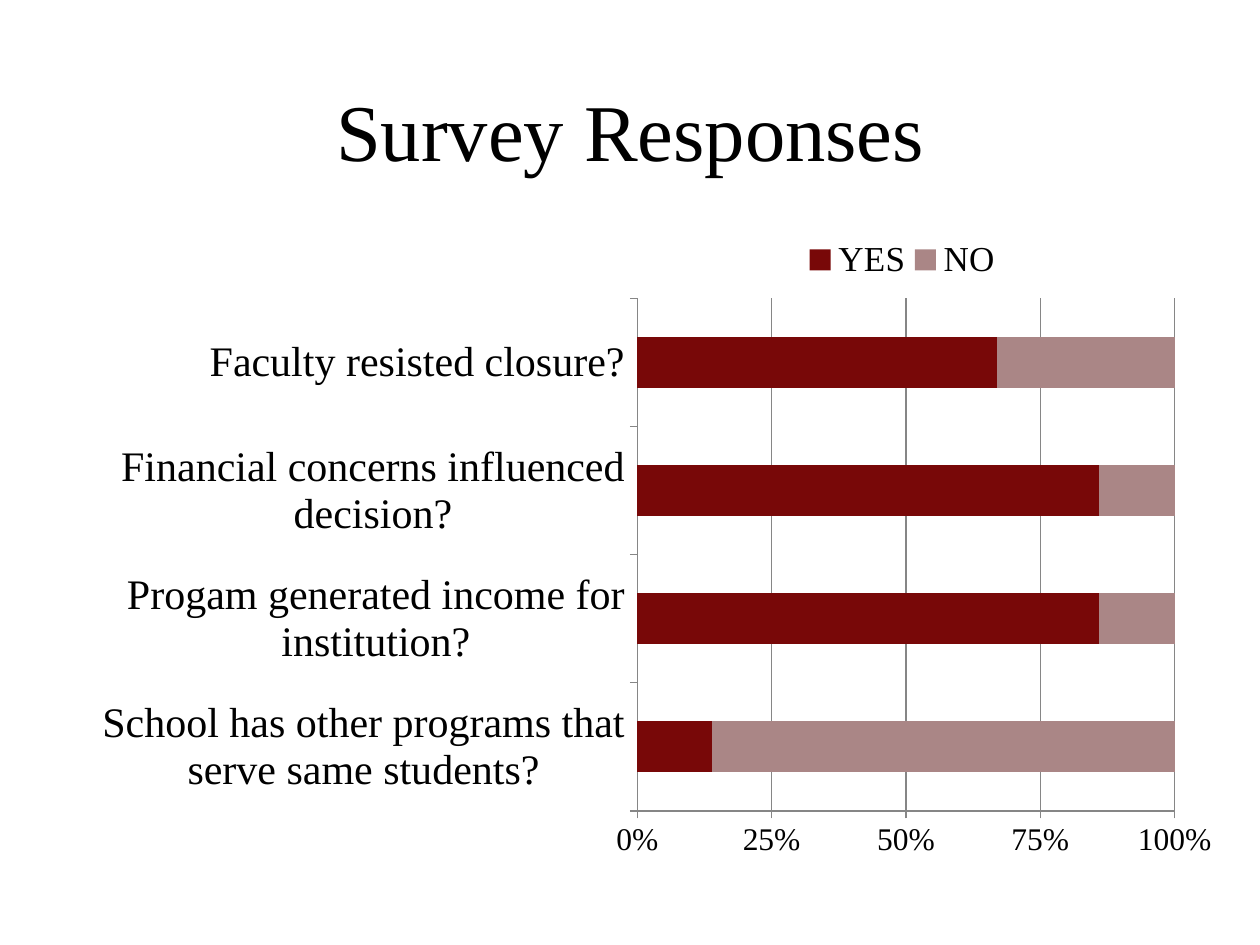
import pptx
import pptx.chart.data
import pptx.dml.color
import pptx.enum.chart
import pptx.enum.text
import pptx.oxml
import pptx.oxml.ns
import pptx.util

Inches = pptx.util.Inches
Pt = pptx.util.Pt
RGBColor = pptx.dml.color.RGBColor

BLACK = RGBColor(0x00, 0x00, 0x00)
GRAY = RGBColor(0x86, 0x86, 0x86)
DARK_RED = RGBColor(0x78, 0x08, 0x08)
DUSTY_ROSE = RGBColor(0xAA, 0x86, 0x86)
FONT_NAME = "Times New Roman"

QUESTIONS = [
    "School has other programs that serve same students?",
    "Progam generated income for institution?",
    "Financial concerns influenced decision?",
    "Faculty resisted closure?",
]
RESPONSES = [
    ("YES", [14, 86, 86, 67], DARK_RED),
    ("NO", [86, 14, 14, 33], DUSTY_ROSE),
]


def format_font(font, size):
    font.name = FONT_NAME
    font.size = Pt(size)
    font.color.rgb = BLACK


def place_title(slide, left, top, width, height):
    title = slide.shapes.title
    title.left, title.top, title.width, title.height = left, top, width, height
    title.text_frame.text = "Survey Responses"
    title.text_frame.vertical_anchor = pptx.enum.text.MSO_ANCHOR.MIDDLE
    paragraph = title.text_frame.paragraphs[0]
    paragraph.alignment = pptx.enum.text.PP_ALIGN.CENTER
    format_font(paragraph.font, 46)


def make_layout(x, y, width, height, inner=False):
    target = '<c:layoutTarget val="inner"/>' if inner else ""
    return pptx.oxml.parse_xml(
        f'<c:layout {pptx.oxml.ns.nsdecls("c")}><c:manualLayout>{target}'
        '<c:xMode val="edge"/><c:yMode val="edge"/>'
        f'<c:x val="{x}"/><c:y val="{y}"/><c:w val="{width}"/><c:h val="{height}"/>'
        "</c:manualLayout></c:layout>"
    )


def set_layout(element, position, layout):
    for existing in element.findall(pptx.oxml.ns.qn("c:layout")):
        element.remove(existing)
    element.insert(position, layout)


def format_axes(chart):
    category_axis, value_axis = chart.category_axis, chart.value_axis
    for axis, size in ((category_axis, 24), (value_axis, 18)):
        axis.major_tick_mark = pptx.enum.chart.XL_TICK_MARK.OUTSIDE
        axis.minor_tick_mark = pptx.enum.chart.XL_TICK_MARK.NONE
        axis.format.line.color.rgb = GRAY
        axis.format.line.width = Pt(0.75)
        format_font(axis.tick_labels.font, size)
    category_axis.has_major_gridlines = False
    value_axis.has_major_gridlines = True
    value_axis.major_gridlines.format.line.color.rgb = GRAY
    value_axis.major_gridlines.format.line.width = Pt(0.75)
    value_axis.minimum_scale = 0
    value_axis.maximum_scale = 1
    value_axis.major_unit = 0.25
    value_axis.tick_labels.number_format = "0%"
    value_axis.tick_labels.number_format_is_linked = False


def place_chart(slide, left, top, width, height):
    data = pptx.chart.data.CategoryChartData()
    data.categories = QUESTIONS
    for name, values, color in RESPONSES:
        data.add_series(name, values)
    chart = slide.shapes.add_chart(
        pptx.enum.chart.XL_CHART_TYPE.BAR_STACKED_100, left, top, width, height, data
    ).chart
    chart.has_title = False
    format_font(chart.font, 18)

    plot = chart.plots[0]
    plot.vary_by_categories = False
    plot.gap_width = 150
    plot.overlap = 100
    for series, (name, values, color) in zip(plot.series, RESPONSES):
        series.format.fill.solid()
        series.format.fill.fore_color.rgb = color
    format_axes(chart)

    chart.has_legend = True
    legend = chart.legend
    legend.position = pptx.enum.chart.XL_LEGEND_POSITION.TOP
    legend.include_in_layout = False
    format_font(legend.font, 20)
    set_layout(legend._element, 1, make_layout(0.64, 0.06, 0.17, 0.08))
    plot_area = chart._chartSpace.chart.plotArea
    set_layout(plot_area, 0, make_layout(0.504, 0.154, 0.448, 0.723, inner=True))


def main():
    presentation = pptx.Presentation()
    presentation.slide_width = Inches(10)
    presentation.slide_height = Inches(7.5)
    slide = presentation.slides.add_slide(presentation.slide_layouts[5])
    place_title(slide, Inches(1), Inches(0.55), Inches(8), Inches(0.95))
    place_chart(slide, Inches(0.26), Inches(1.5), Inches(9.52), Inches(5.63))
    presentation.save("out.pptx")


if __name__ == "__main__":
    main()
